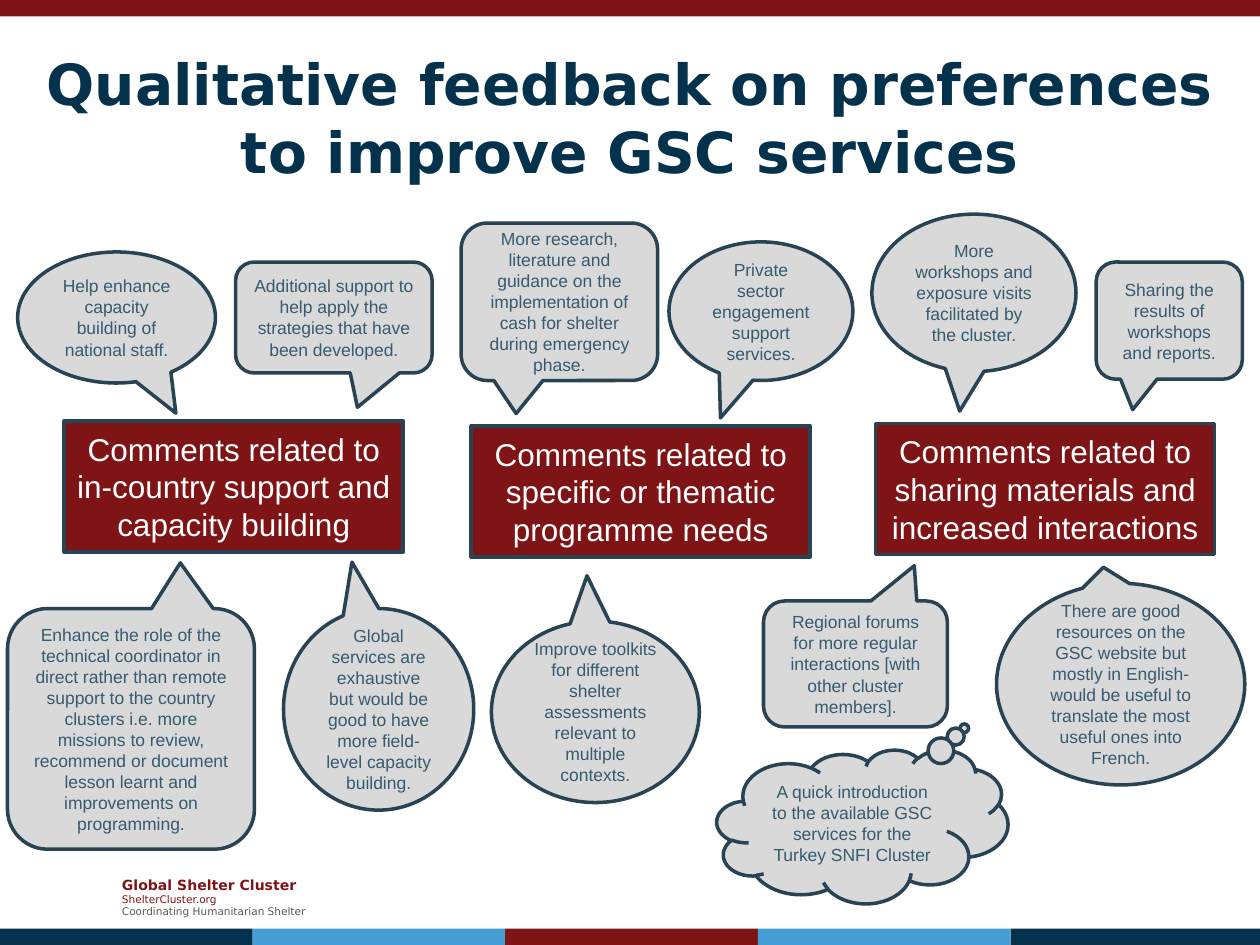
from pptx import Presentation
from pptx.dml.color import RGBColor
from pptx.enum.shapes import MSO_SHAPE
from pptx.enum.text import MSO_ANCHOR, PP_ALIGN
from pptx.util import Inches, Pt

RECT, BOX = MSO_SHAPE.RECTANGLE, MSO_SHAPE.FLOWCHART_PROCESS
OVAL, ROUND, CLOUD = (MSO_SHAPE.OVAL_CALLOUT, MSO_SHAPE.ROUNDED_RECTANGULAR_CALLOUT,
                      MSO_SHAPE.CLOUD_CALLOUT)
MIDDLE, CENTER, LEFT = MSO_ANCHOR.MIDDLE, PP_ALIGN.CENTER, PP_ALIGN.LEFT

RED = RGBColor(0x7F, 0x14, 0x16)
NAVY = RGBColor(0x04, 0x31, 0x4C)
BLUE = RGBColor(0x45, 0x9F, 0xD5)
GREY = RGBColor(0xD9, 0xD9, 0xD9)
DARK_GREY = RGBColor(0x59, 0x59, 0x59)
OUTLINE = RGBColor(0x28, 0x43, 0x53)
SLATE = RGBColor(0x36, 0x5A, 0x70)
WHITE = RGBColor(0xFF, 0xFF, 0xFF)

COLS, ROWS = 100, 75
CELL = Inches(0.1)
BAND_W, BAND_H = 20.05, 1.3
THEME_W, THEME_H = 26.9, 10.4

TITLE = {"name": "DejaVu Sans", "size": Pt(32.4), "bold": True}
FOOTER_HEAD = {"name": "DejaVu Sans", "size": Pt(8), "bold": True}
FOOTER_BODY = {"name": "DejaVu Sans", "size": Pt(6), "bold": False}
COMMENT = {"name": "Arial", "size": Pt(10)}
THEME = {"name": "Arial", "size": Pt(18)}

THEMES = [
    (5.1, 33.4, "Comments related to in-country support and capacity building"),
    (37.4, 33.8, "Comments related to specific or thematic programme needs"),
    (69.5, 33.6, "Comments related to sharing materials and increased interactions"),
]

# kind, (column, row, columns, rows), pointer tip from the centre, text
COMMENTS = [
    (OVAL, (1.4, 20, 15.7, 10.4), (0.3, 0.73),
     "Help enhance capacity building of national staff."),
    (ROUND, (18.7, 20.8, 15.6, 8.8), (0.12, 0.81),
     "Additional support to help apply the strategies that have been developed."),
    (ROUND, (36.6, 17.7, 15.6, 12.5), (-0.22, 0.71),
     "More research, literature and guidance on the implementation of cash for "
     "shelter during emergency phase."),
    (OVAL, (53.1, 19.2, 14.6, 11), (-0.22, 0.77),
     "Private sector engagement support services."),
    (OVAL, (69.2, 17, 16.2, 12.5), (-0.07, 0.75),
     "More workshops and exposure visits facilitated by the cluster."),
    (ROUND, (87, 20.8, 11.6, 9.3), (-0.25, 0.76),
     "Sharing the results of workshops and reports."),
    (ROUND, (0.6, 48.3, 19.6, 19.1), (0.2, -0.69),
     "Enhance the role of the technical coordinator in direct rather than remote "
     "support to the country clusters i.e. more missions to review, recommend or "
     "document lesson learnt and improvements on programming."),
    (OVAL, (22.5, 48.3, 15.1, 16), (-0.14, -0.73),
     "Global services are exhaustive but would be good to have more field-level "
     "capacity building."),
    (OVAL, (39, 49.3, 16.5, 14.4), (-0.04, -0.75),
     "Improve toolkits for different shelter assessments relevant to multiple "
     "contexts."),
    (ROUND, (60.6, 47.7, 14.6, 10), (0.32, -0.78),
     "Regional forums for more regular interactions [with other cluster members]."),
    (OVAL, (79.1, 46.3, 19.7, 16), (-0.07, -0.58),
     "There are good resources on the GSC website but mostly in English- would be "
     "useful to translate the most useful ones into French."),
    (CLOUD, (56.9, 59.5, 23.1, 12.2), (0.35, -0.64),
     "A quick introduction to the available GSC services for the Turkey SNFI Cluster"),
]


def grid(*cells):
    return [round(c * CELL) for c in cells]


def write(sp, lines, align=CENTER):
    """Fill a shape with one paragraph per (text, format, colour)."""
    tf = sp.text_frame
    tf.word_wrap = True
    tf.vertical_anchor = MIDDLE
    for i, (text, fmt, color) in enumerate(lines):
        p = tf.add_paragraph() if i else tf.paragraphs[0]
        p.alignment = align
        r = p.add_run()
        r.text = text
        for key, value in fmt.items():
            setattr(r.font, key, value)
        r.font.color.rgb = color


def add_text(s, cells, lines, align=CENTER):
    write(s.shapes.add_textbox(*grid(*cells)), lines, align)


def add_filled(s, kind, cells, fill, line=None):
    sp = s.shapes.add_shape(kind, *grid(*cells))
    sp.shadow.inherit = False
    sp.fill.solid()
    sp.fill.fore_color.rgb = fill
    if line is None:
        sp.line.fill.background()
    else:
        sp.line.color.rgb = line
        sp.line.width = Pt(2)
    return sp


def add_bands(s):
    add_filled(s, RECT, (0, 0, COLS, BAND_H), RED)
    for i, color in enumerate((NAVY, BLUE, RED, BLUE, NAVY)):
        left = i * BAND_W
        width = min(BAND_W, COLS - left)
        add_filled(s, RECT, (left, ROWS - BAND_H, width, BAND_H), color)


def add_comment(s, kind, cells, tip, text):
    sp = add_filled(s, kind, cells, GREY, OUTLINE)
    for i, value in enumerate(tip):
        sp.adjustments[i] = value
    write(sp, [(text, COMMENT, SLATE)])


def add_theme(s, col, row, text):
    sp = add_filled(s, BOX, (col, row, THEME_W, THEME_H), RED, OUTLINE)
    write(sp, [(text, THEME, WHITE)])


def main():
    prs = Presentation()
    prs.slide_width, prs.slide_height = grid(COLS, ROWS)
    s = prs.slides.add_slide(prs.slide_layouts[6])
    add_text(s, (8.7, 69, 17.3, 4.4), [
        ("Global Shelter Cluster", FOOTER_HEAD, RED),
        ("ShelterCluster.org", FOOTER_BODY, RED),
        ("Coordinating Humanitarian Shelter", FOOTER_BODY, DARK_GREY),
    ], LEFT)
    add_bands(s)
    add_text(s, (0, 3, COLS, 12.5), [
        ("Qualitative feedback on preferences to improve GSC services", TITLE, NAVY)])
    for comment in COMMENTS:
        add_comment(s, *comment)
    for theme in THEMES:
        add_theme(s, *theme)
    prs.save("out.pptx")


if __name__ == "__main__":
    main()
